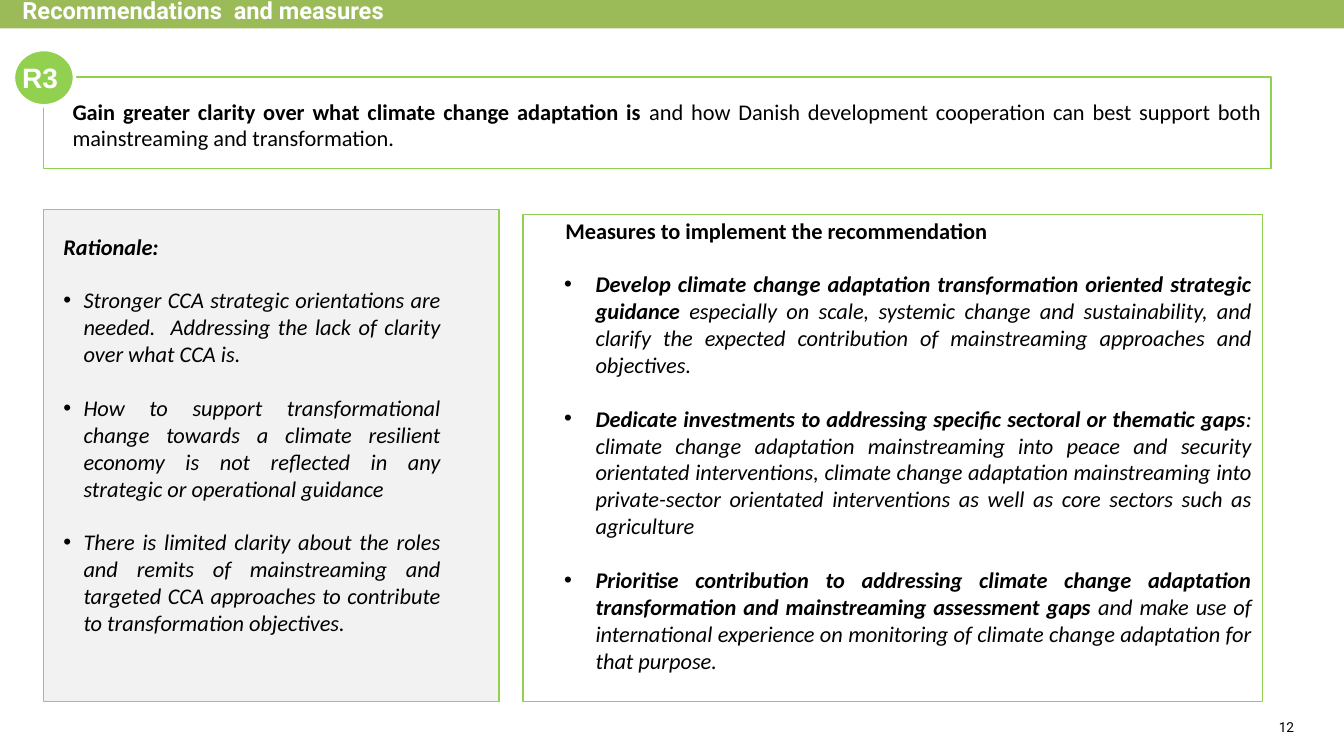
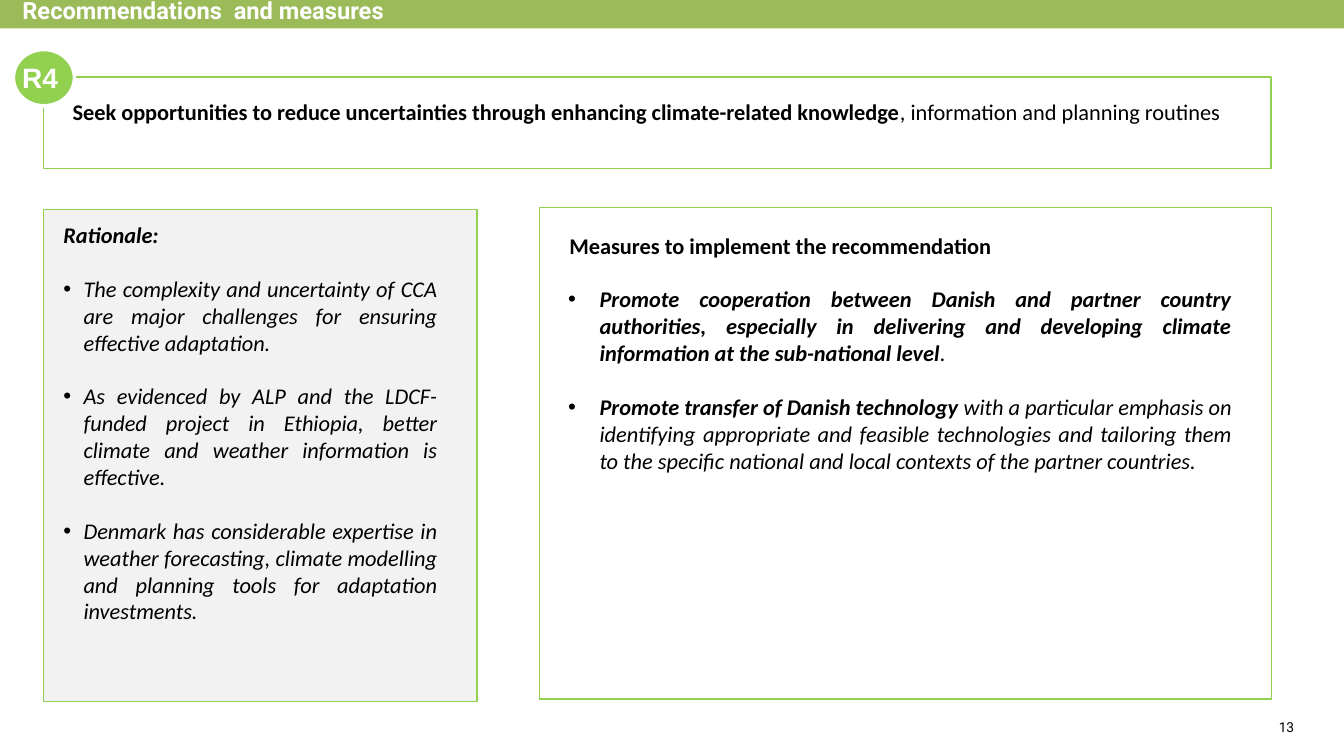
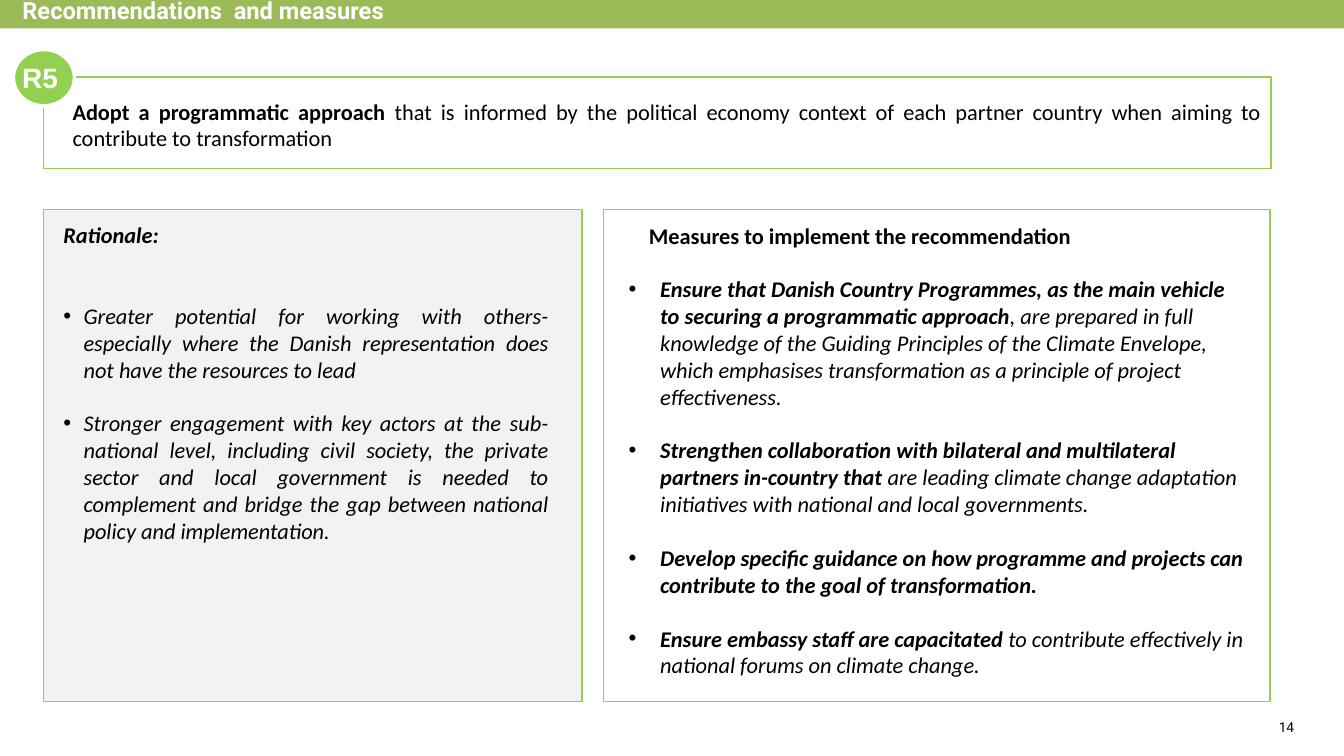
from lxml import etree
from pptx import Presentation
from pptx.dml.color import RGBColor
from pptx.enum import shapes, text
from pptx.oxml import ns
from pptx.util import Pt

GREEN, BAND, GREY, BLACK, WHITE = "92D050", "9BBB59", "F2F2F2", "000000", "FFFFFF"
LEFT = 31
LINE_GAP = 19.2
JUSTIFY, START = text.PP_ALIGN.JUSTIFY, text.PP_ALIGN.LEFT


def color(hex_code):
    return RGBColor.from_string(hex_code)


def write(frame, *runs, font="Calibri", size=16, ink=BLACK, italic=False,
          align=START, margin=0, indent=0, before=0, bullet=False):
    """Add one paragraph; each run is a (text, bold) pair."""
    paragraph = frame.paragraphs[0]
    if paragraph.runs:
        paragraph = frame.add_paragraph()
    properties = paragraph._p.get_or_add_pPr()
    properties.set("marL", str(Pt(margin)))
    properties.set("indent", str(Pt(indent)))
    if bullet:
        etree.SubElement(properties, ns.qn("a:buFont"), typeface="Arial")
        etree.SubElement(properties, ns.qn("a:buChar"), char="•")
    paragraph.alignment = align
    if before:
        paragraph.space_before = Pt(before)
    for words, bold in runs:
        run = paragraph.add_run()
        run.text = words
        run.font.name, run.font.size = font, Pt(size)
        run.font.bold, run.font.italic = bold, italic
        run.font.color.rgb = color(ink)


class Deck:
    def __init__(self):
        self.prs = Presentation()
        self.prs.slide_width, self.prs.slide_height = Pt(960), Pt(540)
        self.slide = None

    def new_slide(self, title):
        self.slide = self.prs.slides.add_slide(self.prs.slide_layouts[5])
        band = self.slide.shapes.title
        band.left, band.top, band.width, band.height = map(Pt, (0, -5.75, 960, 26))
        band.fill.solid()
        band.fill.fore_color.rgb = color(BAND)
        frame = self.setup(band.text_frame, inset=(3, 3, 3, 3))
        frame.vertical_anchor = text.MSO_ANCHOR.MIDDLE
        write(frame, (title, True), font="Roboto", size=16.9, ink=WHITE, margin=13)

    def setup(self, frame, inset=(7.2, 3.6, 7.2, 3.6), wrap=True):
        frame.margin_left, frame.margin_top, frame.margin_right, frame.margin_bottom = map(Pt, inset)
        frame.word_wrap = wrap
        frame.auto_size = text.MSO_AUTO_SIZE.NONE
        return frame

    def shape(self, box, kind=shapes.MSO_SHAPE.RECTANGLE, fill=None, line=GREEN, weight=1):
        item = self.slide.shapes.add_shape(kind, *map(Pt, box))
        item.shadow.inherit = False
        if fill:
            item.fill.solid()
            item.fill.fore_color.rgb = color(fill)
        else:
            item.fill.background()
        item.line.color.rgb = color(line)
        item.line.width = Pt(weight)
        return item

    def text_box(self, box, **layout):
        return self.setup(self.slide.shapes.add_textbox(*map(Pt, box)).text_frame, **layout)

    def badge(self, label):
        circle = self.shape((9.6, 35.4, 43.6, 40.2), shapes.MSO_SHAPE.OVAL,
                            fill=GREEN, line=WHITE, weight=2.5)
        frame = self.setup(circle.text_frame, inset=(0, 0, 5.5, 0), wrap=False)
        frame.vertical_anchor = text.MSO_ANCHOR.MIDDLE
        write(frame, (label, True), font="Arial", size=20, ink=WHITE,
              align=text.PP_ALIGN.CENTER)

    def page_number(self, number):
        frame = self.text_box((908.6, 509, 20.4, 20), inset=(4.5, 4.5, 4.5, 4.5), wrap=False)
        write(frame, (str(number), False), font="Roboto", size=9.8,
              align=text.PP_ALIGN.RIGHT)

    def summary(self, lead, rest):
        self.shape((LEFT, 54.9, 877, 65.4))
        frame = self.text_box((LEFT, 66.2, 877, 46))
        write(frame, (lead, True), (rest, False), align=JUSTIFY, margin=13.7)

    def rationale(self, panel_width, box, reasons, first_gap=LINE_GAP):
        self.shape((LEFT, 149.8, panel_width, 351.2), fill=GREY)
        frame = self.text_box(box)
        style = dict(italic=True, align=JUSTIFY, margin=14.4, indent=-14.4)
        write(frame, ("Rationale:", True), **style)
        for i, reason in enumerate(reasons):
            write(frame, (reason, False), bullet=True,
                  before=LINE_GAP if i else first_gap, **style)

    def measures(self, panel, box, steps, align=JUSTIFY, margin=36):
        self.shape(panel)
        frame = self.text_box(box)
        write(frame, ("Measures to implement the recommendation", True), margin=14.4)
        for lead, rest in steps:
            runs = [(lead, True)] + ([(rest, False)] if rest else [])
            write(frame, *runs, italic=True, align=align, margin=margin,
                  indent=-22.5, before=LINE_GAP, bullet=True)


RECOMMENDATIONS = [
    dict(
        summary=("Gain greater clarity over what climate change adaptation is ",
                 "and how Danish development cooperation can best support both "
                 "mainstreaming and transformation."),
        rationale=dict(
            panel_width=325.5, box=(38.2, 162.8, 283.7, 298),
            reasons=[
                "Stronger CCA strategic orientations are needed.  Addressing the lack of "
                "clarity over what CCA is.",
                "How to support transformational change towards a climate resilient economy "
                "is not reflected in any strategic or operational guidance",
                "There is limited clarity about the roles and remits of mainstreaming and "
                "targeted CCA approaches to contribute to transformation objectives.",
            ]),
        measures=dict(
            panel=(373.7, 153.4, 528.3, 347.6), box=(382.3, 151.3, 519, 356),
            steps=[
                ("Develop climate change adaptation transformation oriented strategic guidance ",
                 "especially on scale, systemic change and sustainability, and clarify the "
                 "expected contribution of mainstreaming approaches and objectives."),
                ("Dedicate investments to addressing specific sectoral or thematic gaps",
                 ": climate change adaptation mainstreaming into peace and security orientated "
                 "interventions, climate change adaptation mainstreaming into private-sector "
                 "orientated interventions as well as core sectors such as agriculture"),
                ("Prioritise contribution to addressing climate change adaptation "
                 "transformation and mainstreaming assessment gaps ",
                 "and make use of international experience on monitoring of climate change "
                 "adaptation for that purpose."),
            ])),
    dict(
        summary=("Seek opportunities to reduce uncertainties through enhancing "
                 "climate-related knowledge",
                 ", information and planning routines"),
        rationale=dict(
            panel_width=309.8, box=(38.2, 154.6, 281.3, 298),
            reasons=[
                "The complexity and uncertainty of CCA are major challenges for ensuring "
                "effective adaptation.",
                "As evidenced by ALP and the LDCF-funded project in Ethiopia, better climate "
                "and weather information is effective.",
                "Denmark has considerable expertise in weather forecasting, climate modelling "
                "and planning tools for adaptation investments.",
            ]),
        measures=dict(
            panel=(385.2, 148.2, 523.2, 351.2), box=(385.2, 162, 501.8, 201),
            steps=[
                ("Promote cooperation between Danish and partner country authorities, "
                 "especially in delivering and developing climate information at the "
                 "sub-national level", "."),
                ("Promote transfer of Danish technology ",
                 "with a particular emphasis on identifying appropriate and feasible "
                 "technologies and tailoring them to the specific national and local "
                 "contexts of the partner countries."),
            ])),
    dict(
        summary=("Adopt a programmatic approach ",
                 "that is informed by the political economy context of each partner country "
                 "when aiming to contribute to transformation"),
        rationale=dict(
            panel_width=384.8, box=(38.2, 154.6, 360.7, 240), first_gap=2 * LINE_GAP,
            reasons=[
                "Greater potential for working with others- especially where the Danish "
                "representation does not have the resources to lead",
                "Stronger engagement with key actors at the sub-national level, including "
                "civil society, the private sector and local government is needed to "
                "complement and bridge the gap between national policy and implementation.",
            ]),
        measures=dict(
            panel=(431.2, 149.8, 476, 351.2), box=(442, 154.8, 457.2, 337),
            align=START, margin=22.5,
            steps=[
                ("Ensure that Danish Country Programmes, as the main vehicle to securing a "
                 "programmatic approach",
                 ", are prepared in full knowledge of the Guiding Principles of the Climate "
                 "Envelope, which emphasises transformation as a principle of project "
                 "effectiveness."),
                ("Strengthen collaboration with bilateral and multilateral partners "
                 "in-country that ",
                 "are leading climate change adaptation initiatives with national and local "
                 "governments."),
                ("Develop specific guidance on how programme and projects can contribute to "
                 "the goal of transformation.", ""),
                ("Ensure embassy staff are capacitated ",
                 "to contribute effectively in national forums on climate change."),
            ])),
]


def main():
    deck = Deck()
    for number, recommendation in enumerate(RECOMMENDATIONS, start=3):
        deck.new_slide("Recommendations  and measures")
        deck.summary(*recommendation["summary"])
        deck.rationale(**recommendation["rationale"])
        deck.measures(**recommendation["measures"])
        deck.badge(f"R{number}")
        deck.page_number(number + 9)
    deck.prs.save("out.pptx")


if __name__ == "__main__":
    main()
